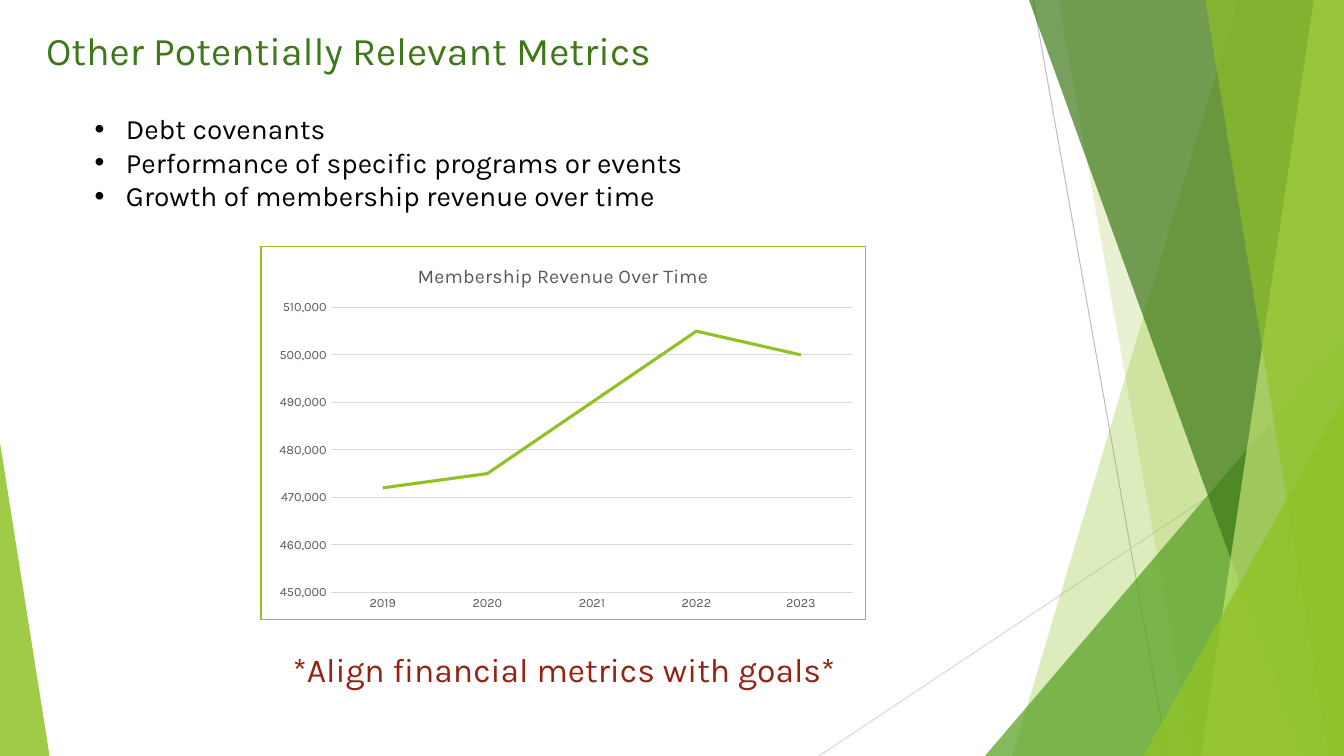
from lxml.etree import SubElement
from pptx import Presentation
from pptx.chart.data import CategoryChartData
from pptx.dml.color import RGBColor
from pptx.enum.chart import XL_CHART_TYPE, XL_TICK_MARK
from pptx.enum.shapes import MSO_CONNECTOR, MSO_SHAPE
from pptx.enum.text import MSO_AUTO_SIZE
from pptx.oxml import parse_xml
from pptx.oxml.ns import nsdecls, qn
from pptx.util import Inches, Pt

COLS, ROWS = 160, 90
COLORS = {
    "lime": "90C226", "pale": "C0E474", "green": "54A021", "dark": "3F7819",
    "rule": "D9D9D9", "gray": "BFBFBF", "label": "595959",
    "black": "000000", "red": "932313",
}


class SlideBuilder:
    font = "Karla"

    def __init__(self, prs):
        self.s = prs.slides.add_slide(prs.slide_layouts[6])
        self.col = prs.slide_width / COLS
        self.row = prs.slide_height / ROWS

    def rgb(self, name):
        return RGBColor.from_string(COLORS[name])

    def point(self, x, y):
        return round(x * self.col), round(y * self.row)

    def box(self, x, y, w, h):
        return *self.point(x, y), *self.point(w, h)

    def style_font(self, font, size, color):
        font.name, font.size, font.bold = self.font, Pt(size), False
        font.color.rgb = self.rgb(color)

    def style_line(self, line, color, width):
        line.color.rgb = self.rgb(color)
        line.width = Pt(width)

    def style_fill(self, sp, color, opacity):
        sp.shadow.inherit = False
        sp.line.fill.background()
        sp.fill.solid()
        sp.fill.fore_color.rgb = self.rgb(color)
        clr = sp.fill._xPr.find(qn("a:solidFill"))[0]
        SubElement(clr, qn("a:alpha")).set("val", str(opacity * 1000))

    def line(self, start, end, color):
        sp = self.s.shapes.add_connector(
            MSO_CONNECTOR.STRAIGHT, *self.point(*start), *self.point(*end))
        self.style_line(sp.line, color, 0.75)
        SubElement(sp._element.spPr, qn("a:effectLst"))

    def band(self, top, bottom, color, opacity, left_edge=False):
        corners = [(COLS, 0), (COLS, ROWS), (bottom, ROWS)]
        fb = self.s.shapes.build_freeform(*self.point(top, 0), scale=1.0)
        fb.add_line_segments([self.point(*c) for c in corners], close=True)
        self.style_fill(fb.convert_to_shape(), color, opacity)

    def triangle(self, x, y, w, apex, color, opacity):
        sp = self.s.shapes.add_shape(
            MSO_SHAPE.ISOSCELES_TRIANGLE, *self.box(x, y, w, ROWS - y))
        sp.adjustments[0] = apex
        self.style_fill(sp, color, opacity)

    def text(self, box, lines, size, color, bullet=False):
        tf = self.s.shapes.add_textbox(*self.box(*box)).text_frame
        tf.word_wrap = True
        tf.auto_size = MSO_AUTO_SIZE.SHAPE_TO_FIT_TEXT
        for i, line in enumerate(lines):
            p = tf.add_paragraph() if i else tf.paragraphs[0]
            r = p.add_run()
            r.text = line
            self.style_font(r.font, size, color)
            if bullet:
                pPr = p._p.get_or_add_pPr()
                indent = Inches(0.31)
                pPr.set("marL", str(indent))
                pPr.set("indent", str(-indent))
                SubElement(pPr, qn("a:buFont")).set("typeface", "Arial")
                SubElement(pPr, qn("a:buChar")).set("char", "•")

    def line_chart(self, box, title, cats, vals, scale, plot):
        data = CategoryChartData(number_format="#,##0")
        data.categories = cats
        data.add_series("Series 1", vals)
        chart = self.s.shapes.add_chart(
            XL_CHART_TYPE.LINE, *self.box(*box), data).chart
        chart.has_legend = False
        self.style_font(chart.font, 10, "black")
        chart.has_title = True
        r = chart.chart_title.text_frame.paragraphs[0].add_run()
        r.text = title
        self.style_font(r.font, 14, "label")

        series = chart.plots[0].series[0]
        chart.plots[0].vary_by_categories = False
        series.smooth = False
        self.style_line(series.format.line, "lime", 2.25)

        for axis in (chart.category_axis, chart.value_axis):
            axis.major_tick_mark = axis.minor_tick_mark = XL_TICK_MARK.NONE
            self.style_font(axis.tick_labels.font, 9, "label")
        self.style_line(chart.category_axis.format.line, "rule", 0.75)
        axis = chart.value_axis
        axis.minimum_scale, axis.maximum_scale, axis.major_unit = scale
        axis.format.line.fill.background()
        self.style_line(axis.major_gridlines.format.line, "rule", 0.75)
        axis.tick_labels.number_format = "#,##0"
        axis.tick_labels.number_format_is_linked = False
        self.frame_chart(chart, plot)

    def frame_chart(self, chart, plot):
        area = chart._chartSpace.chart.plotArea
        for old in area.findall(qn("c:layout")):
            area.remove(old)
        layout = SubElement(area, qn("c:layout"))
        area.insert(0, layout)
        manual = SubElement(layout, qn("c:manualLayout"))
        settings = [("layoutTarget", "inner"), ("xMode", "edge"), ("yMode", "edge")]
        for tag, val in settings + list(zip("xywh", plot)):
            SubElement(manual, qn(f"c:{tag}")).set("val", str(val))
        chart._chartSpace.chart.addnext(parse_xml(
            f'<c:spPr {nsdecls("c", "a")}><a:solidFill><a:srgbClr val="FFFFFF"/>'
            f'</a:solidFill><a:ln w="{Pt(1)}"><a:solidFill>'
            f'<a:srgbClr val="{COLORS["lime"]}"/></a:solidFill></a:ln></c:spPr>'))


def main():
    prs = Presentation()
    prs.slide_width, prs.slide_height = Inches(13.33), Inches(7.5)
    b = SlideBuilder(prs)

    b.line((123, 0), (139, ROWS), "gray")
    b.line((COLS, 48.36), (97.5, ROWS), "rule")
    b.band(147.4, 120.5, "lime", 30)
    b.band(126, 142, "lime", 20)
    b.triangle(117.25, 40, 42.75, 1, "green", 72)
    b.band(122.5, 155, "dark", 70)
    b.band(156.4, 143, "pale", 70)
    b.band(143.5, 158.2, "lime", 65)
    b.triangle(136.1, 47.2, 23.9, 1, "lime", 80)
    b.triangle(0, 52.7, 5.9, 0, "lime", 85)

    b.text((10.1, 12.7, 83, 13.3), [
        "Debt covenants",
        "Performance of specific programs or events",
        "Growth of membership revenue over time",
    ], 20, "black", bullet=True)
    b.line_chart((31, 29.3, 72.1, 44.5), "Membership Revenue Over Time",
                 ["2019", "2020", "2021", "2022", "2023"],
                 [472000, 475000, 490000, 505000, 500000],
                 (450000, 510000, 10000), (0.115, 0.163, 0.865, 0.765))
    b.text((4.3, 2.6, 94.6, 6.9), ["Other Potentially Relevant Metrics"], 28, "dark")
    b.text((33.7, 76.7, 67.7, 6), ["*Align financial metrics with goals*"], 24, "red")
    prs.save("out.pptx")


if __name__ == "__main__":
    main()
